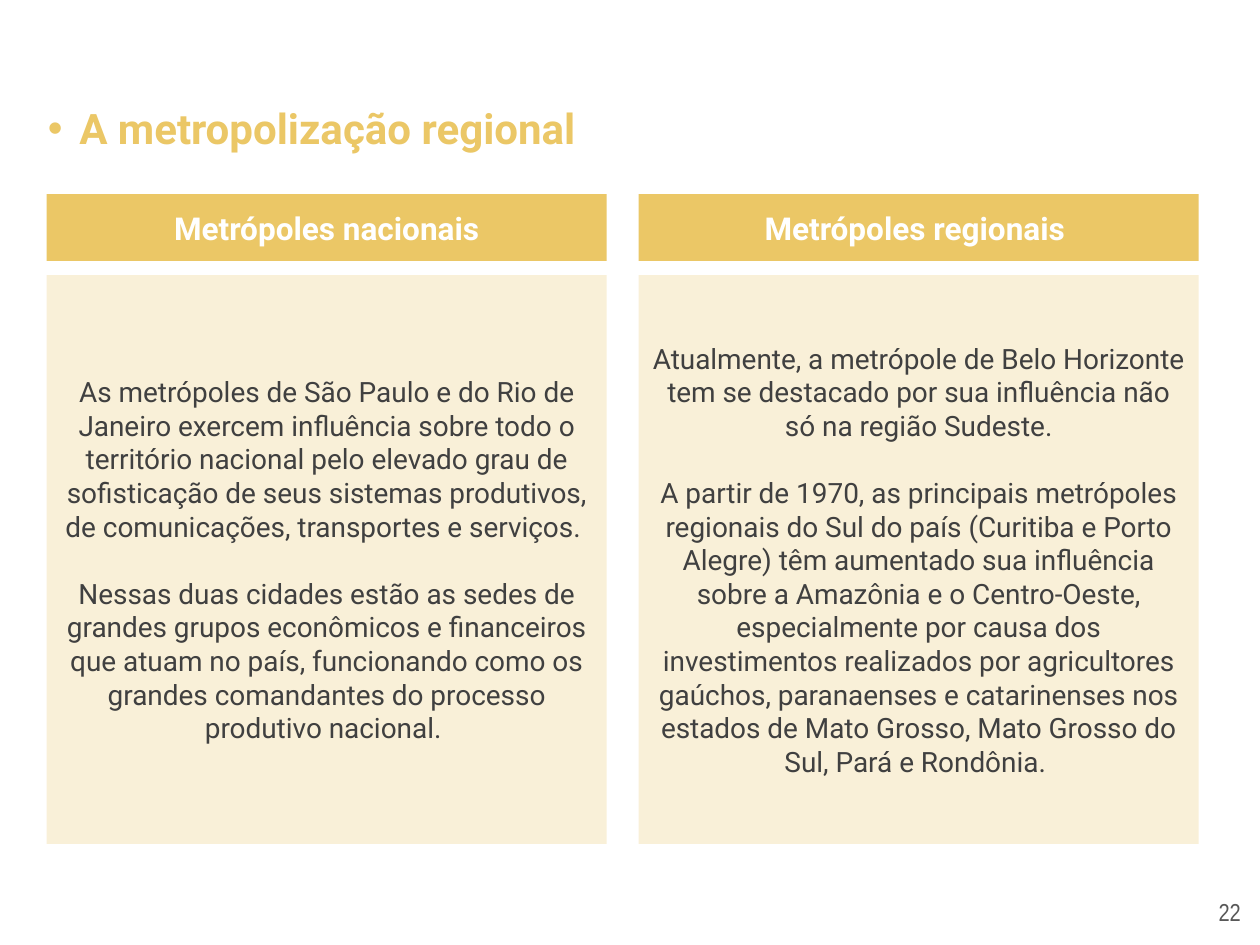
from lxml.etree import SubElement
from pptx import Presentation
from pptx.dml.color import RGBColor
from pptx.enum.shapes import MSO_SHAPE
from pptx.enum.text import MSO_ANCHOR, PP_ALIGN
from pptx.oxml.ns import qn
from pptx.util import Pt

COLORS = {
    "gold": "EBC766",
    "body": "404040",
    "number": "585858",
    "white": "FFFFFF",
}

presentation = Presentation()
presentation.slide_width, presentation.slide_height = Pt(720), Pt(540)
slide = presentation.slides.add_slide(presentation.slide_layouts[6])


def write(shape, *texts, size, color, font="Roboto", bold=False,
          align=PP_ALIGN.CENTER, anchor=MSO_ANCHOR.MIDDLE, gap=0, bullet=None):
    """Write one paragraph per text, with a gap in points between them."""
    frame = shape.text_frame
    frame.word_wrap = True
    frame.vertical_anchor = anchor
    for index, text in enumerate(texts):
        paragraph = frame.add_paragraph() if index else frame.paragraphs[0]
        paragraph.text = text
        paragraph.alignment = align
        if index:
            paragraph.space_before = Pt(gap)
        if bullet:
            paragraph.line_spacing = 0.9
            properties = paragraph._p.get_or_add_pPr()
            properties.set("marL", str(Pt(18)))
            properties.set("indent", str(Pt(-18)))
            bullet_color = SubElement(properties, qn("a:buClr"))
            SubElement(bullet_color, qn("a:srgbClr"), val=COLORS[color])
            SubElement(properties, qn("a:buFont"), typeface="Arial")
            SubElement(properties, qn("a:buChar"), char=bullet)
        paragraph.font.size = Pt(size)
        paragraph.font.name = font
        paragraph.font.bold = bold
        paragraph.font.color.rgb = RGBColor.from_string(COLORS[color])
        for run in paragraph.runs:
            run.font.size = Pt(size)
            run.font.name = font
            run.font.bold = bold
            run.font.color.rgb = RGBColor.from_string(COLORS[color])


def add_panel(left, top, width, height, opacity=100):
    """Add a gold rectangle without a line; opacity is in percent."""
    shape = slide.shapes.add_shape(
        MSO_SHAPE.RECTANGLE, Pt(left), Pt(top), Pt(width), Pt(height))
    shape.shadow.inherit = False
    shape.line.fill.background()
    shape.fill.solid()
    shape.fill.fore_color.rgb = RGBColor.from_string(COLORS["gold"])
    if opacity < 100:
        fill_color = shape._element.spPr.find(qn("a:solidFill"))[0]
        SubElement(fill_color, qn("a:alpha"), val=str(opacity * 1000))
    return shape


# Slide number
number = slide.shapes.add_textbox(Pt(679.7), Pt(509), Pt(46), Pt(24.5))
write(number, "22", size=14, color="number", font="Arial Narrow",
      anchor=MSO_ANCHOR.TOP)

# Title
title = slide.shapes.add_textbox(Pt(20.2), Pt(58.3), Pt(680), Pt(40))
write(title, "A metropolização regional", size=24, color="gold", bold=True,
      align=PP_ALIGN.LEFT, anchor=MSO_ANCHOR.TOP, bullet="•")

# Two columns, each with a heading above a pale panel
columns = [
    ("Metrópoles nacionais", [
        "As metrópoles de São Paulo e do Rio de Janeiro exercem influência "
        "sobre todo o território nacional pelo elevado grau de sofisticação "
        "de seus sistemas produtivos, de comunicações, transportes e "
        "serviços. ",
        "Nessas duas cidades estão as sedes de grandes grupos econômicos e "
        "financeiros que atuam no país, funcionando como os grandes "
        "comandantes do processo produtivo nacional. ",
    ]),
    ("Metrópoles regionais ", [
        "Atualmente, a metrópole de Belo Horizonte tem se destacado por sua "
        "influência não só na região Sudeste.",
        "A partir de 1970, as principais metrópoles regionais do Sul do país "
        "(Curitiba e Porto Alegre) têm aumentado sua influência sobre a "
        "Amazônia e o Centro-Oeste, especialmente por causa dos "
        "investimentos realizados por agricultores gaúchos, paranaenses e "
        "catarinenses nos estados de Mato Grosso, Mato Grosso do Sul, Pará e "
        "Rondônia. ",
    ]),
]
column_left, column_width, column_step = 26.7, 320, 338.3
for index, (heading, texts) in enumerate(columns):
    left = column_left + index * column_step
    panel = add_panel(left, 157.2, column_width, 325, opacity=25)
    write(panel, *texts, size=16, color="body", gap=19.2)
    header = add_panel(left, 110.9, column_width, 38.2)
    write(header, heading, size=18, color="white", bold=True)

presentation.save("out.pptx")
